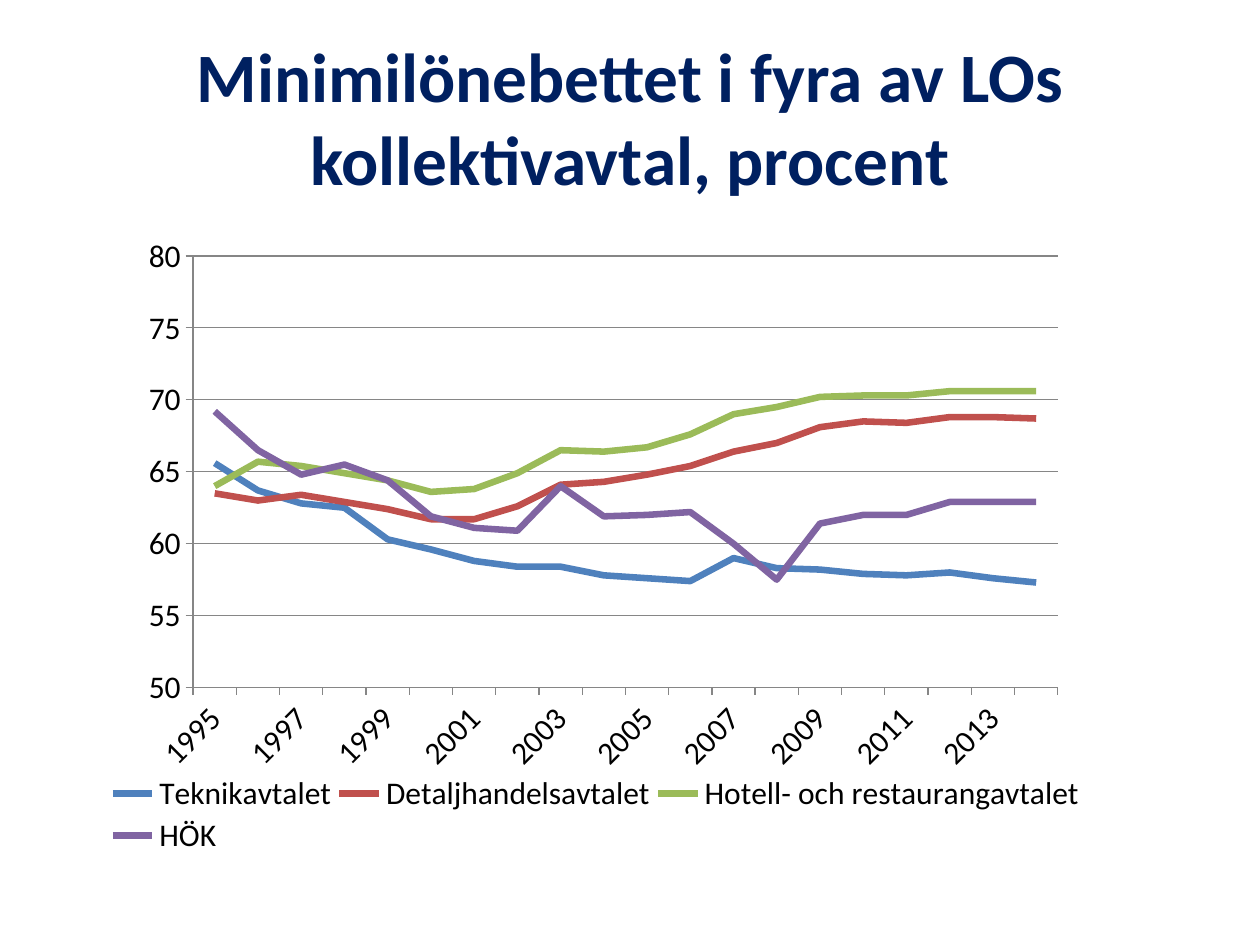
from dataclasses import dataclass

from lxml.etree import SubElement
from pptx import Presentation
from pptx.chart.data import CategoryChartData
from pptx.dml.color import RGBColor
from pptx.enum.chart import XL_CHART_TYPE, XL_LEGEND_POSITION, XL_TICK_MARK
from pptx.enum.text import MSO_ANCHOR, MSO_AUTO_SIZE, PP_ALIGN
from pptx.oxml.ns import qn
from pptx.util import Cm, Pt

COLORS = {
    "title": "002060",
    "text": "000000",
    "axis": "868686",
    "blue": "4F81BD",
    "red": "C0504D",
    "green": "9BBB59",
    "purple": "8064A2",
}
FONT = "Calibri"
YEARS = range(1995, 2015)


@dataclass
class Wage:
    name: str
    color: str
    values: list[float]


WAGES = [
    Wage("Teknikavtalet", "blue",
         [65.6, 63.7, 62.8, 62.5, 60.3, 59.6, 58.8, 58.4, 58.4, 57.8,
          57.6, 57.4, 59, 58.3, 58.2, 57.9, 57.8, 58, 57.6, 57.3]),
    Wage("Detaljhandelsavtalet", "red",
         [63.5, 63, 63.4, 62.9, 62.4, 61.7, 61.7, 62.6, 64.1, 64.3,
          64.8, 65.4, 66.4, 67, 68.1, 68.5, 68.4, 68.8, 68.8, 68.7]),
    Wage("Hotell- och restaurangavtalet", "green",
         [64, 65.7, 65.4, 64.9, 64.4, 63.6, 63.8, 64.9, 66.5, 66.4,
          66.7, 67.6, 69, 69.5, 70.2, 70.3, 70.3, 70.6, 70.6, 70.6]),
    Wage("HÖK", "purple",
         [69.2, 66.5, 64.8, 65.5, 64.4, 61.9, 61.1, 60.9, 64, 61.9,
          62, 62.2, 60, 57.5, 61.4, 62, 62, 62.9, 62.9, 62.9]),
]


def paint(line, color: str, width: float) -> None:
    line.color.rgb = RGBColor.from_string(COLORS[color])
    line.width = Pt(width)


def style(font, size: float, color: str, bold: bool) -> None:
    font.name = FONT
    font.size = Pt(size)
    font.bold = bold
    font.color.rgb = RGBColor.from_string(COLORS[color])


def place(parent, index: int, inner: bool, box: tuple) -> None:
    for old in parent.findall(qn("c:layout")):
        parent.remove(old)
    layout = SubElement(parent, qn("c:layout"))
    parent.insert(index, layout)
    manual = SubElement(layout, qn("c:manualLayout"))
    if inner:
        SubElement(manual, qn("c:layoutTarget"), val="inner")
    for tag in ("xMode", "yMode"):
        SubElement(manual, qn(f"c:{tag}"), val="edge")
    for tag, part in zip("xywh", box):
        SubElement(manual, qn(f"c:{tag}"), val=str(part))


def add_title(slide) -> None:
    title = slide.shapes.title
    title.left, title.top = Cm(1.27), Cm(0.76)
    title.width, title.height = Cm(22.86), Cm(3.18)
    frame = title.text_frame
    frame.text = "Minimilönebettet i fyra av LOs kollektivavtal, procent"
    frame.word_wrap = True
    frame.auto_size = MSO_AUTO_SIZE.NONE
    frame.vertical_anchor = MSO_ANCHOR.MIDDLE
    para = frame.paragraphs[0]
    para.alignment = PP_ALIGN.CENTER
    style(para.font, 39.6, "title", True)


def set_axes(chart) -> None:
    years, rates = chart.category_axis, chart.value_axis
    for axis in (years, rates):
        axis.major_tick_mark = XL_TICK_MARK.OUTSIDE
        axis.minor_tick_mark = XL_TICK_MARK.NONE
        paint(axis.format.line, "axis", 0.75)
        style(axis.tick_labels.font, 18, "text", False)
    rates.minimum_scale, rates.maximum_scale = 50, 80
    rates.major_unit = 5
    rates.has_major_gridlines = True
    paint(rates.major_gridlines.format.line, "axis", 0.75)
    rates.tick_labels.number_format = "0"
    rates.tick_labels.number_format_is_linked = False

    root = years._element
    root.find(qn("c:txPr")).find(qn("a:bodyPr")).set("rot", "-2700000")
    skip = SubElement(root, qn("c:tickLblSkip"), val="2")
    root.find(qn("c:noMultiLvlLbl")).addprevious(skip)


def add_graph(slide) -> None:
    data = CategoryChartData(number_format="0.0")
    data.categories = [str(year) for year in YEARS]
    for wage in WAGES:
        data.add_series(wage.name, wage.values)
    chart = slide.shapes.add_chart(
        XL_CHART_TYPE.LINE, Cm(2.11), Cm(4.52), Cm(19.81), Cm(12.8), data
    ).chart
    chart.has_title = False
    style(chart.font, 18, "text", False)
    set_axes(chart)
    for line, wage in zip(chart.plots[0].series, WAGES):
        line.smooth = False
        paint(line.format.line, wage.color, 3.75)

    chart.has_legend = True
    legend = chart.legend
    legend.position = XL_LEGEND_POSITION.RIGHT
    legend.include_in_layout = False
    style(legend.font, 18, "text", False)
    place(legend._element, 1, False, (0, 0.86, 1, 0.14))
    area = chart._chartSpace.chart.plotArea
    place(area, 0, True, (0.09, 0.05, 0.88, 0.68))


def main() -> None:
    deck = Presentation()
    deck.slide_width, deck.slide_height = Cm(25.4), Cm(19.05)
    slide = deck.slides.add_slide(deck.slide_layouts[5])
    add_title(slide)
    add_graph(slide)
    deck.save("out.pptx")


if __name__ == "__main__":
    main()
